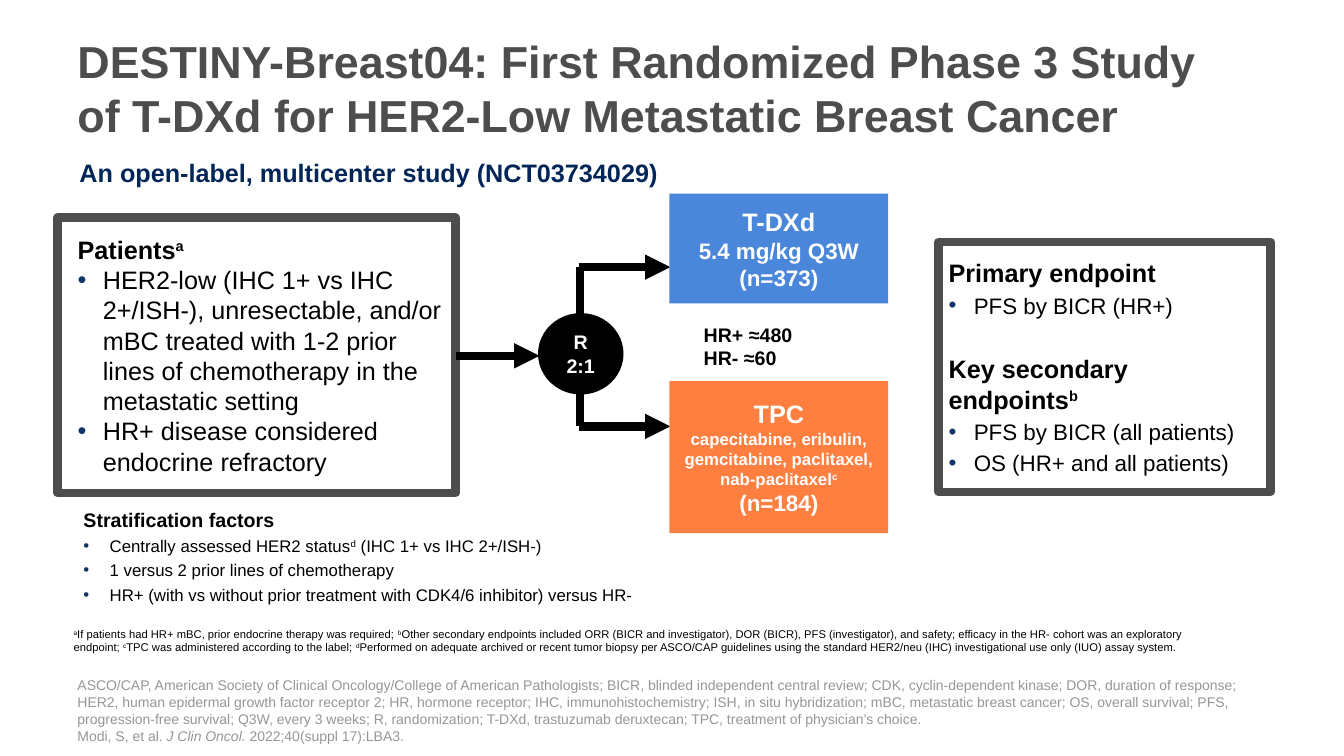
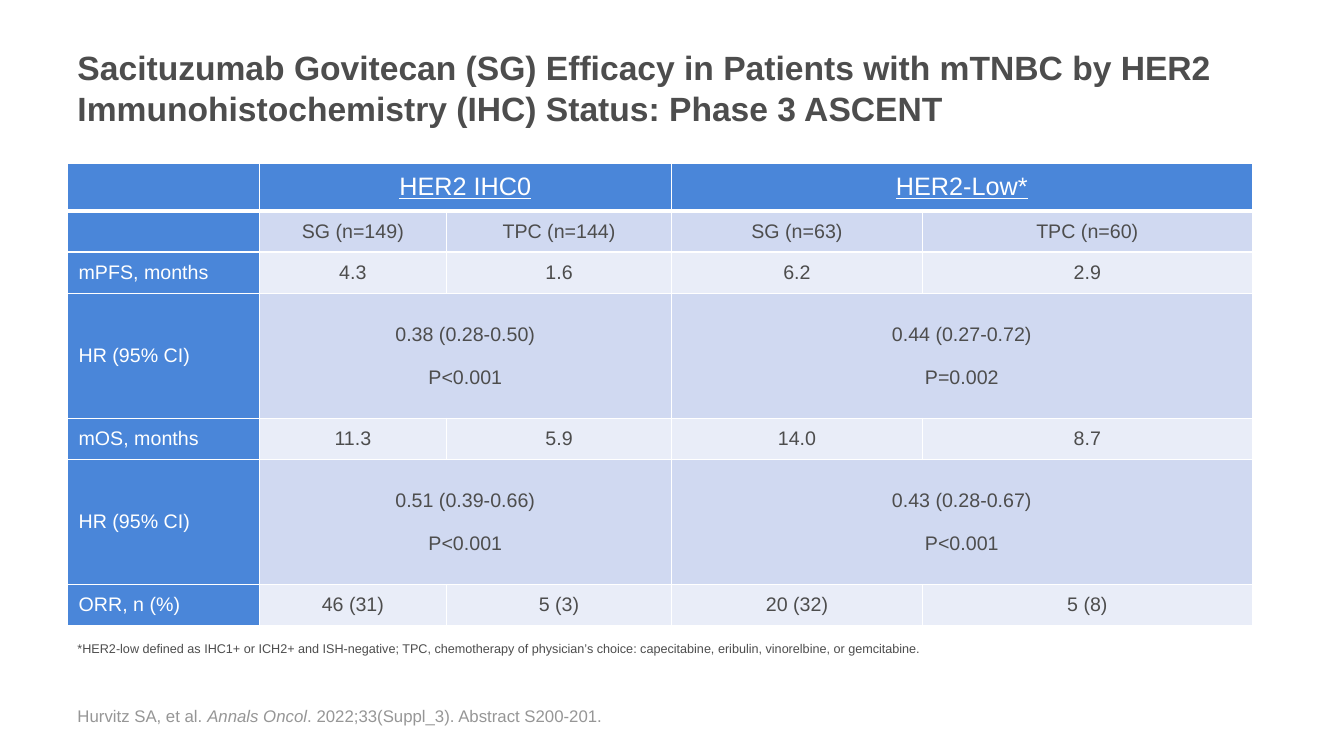
from pptx import Presentation
from pptx import util as u
from pptx.dml.color import RGBColor
from pptx.enum import shapes, text
from pptx.oxml import ns
from lxml import etree

GREY = RGBColor(0x4D, 0x4D, 0x4D)
PALE = RGBColor(0x96, 0x96, 0x96)
NAVY = RGBColor(0x00, 0x25, 0x57)
BLUE = RGBColor(0x4A, 0x86, 0xD9)
ORANGE = RGBColor(0xFF, 0x7F, 0x40)
MID = RGBColor(0xD0, 0xD9, 0xF1)
LIGHT = RGBColor(0xE9, 0xED, 0xF8)
BLACK = RGBColor(0, 0, 0)
WHITE = RGBColor(255, 255, 255)
DOT = "113468"
FONT = "Arial"

LEFT, CENTER = text.PP_ALIGN.LEFT, text.PP_ALIGN.CENTER
TOP, MIDDLE, BOTTOM = (text.MSO_ANCHOR.TOP, text.MSO_ANCHOR.MIDDLE,
                       text.MSO_ANCHOR.BOTTOM)
RECT, OVAL = shapes.MSO_SHAPE.RECTANGLE, shapes.MSO_SHAPE.OVAL
INSET = (0.1, 0.05, 0.1, 0.05)


def node(parent, tag, **attrs):
    return etree.SubElement(parent, ns.qn(tag), **attrs)


def add_dot(para, indent):
    props = para._p.get_or_add_pPr()
    props.set("marL", str(u.Inches(indent)))
    props.set("indent", str(-u.Inches(indent)))
    node(node(props, "a:buClr"), "a:srgbClr", val=DOT)
    node(props, "a:buFont", typeface=FONT)
    node(props, "a:buChar", char="•")


def add_runs(para, line, size, color, bold, under):
    """Write a line in which ^x^ is raised and ~x~ is italic."""
    for i, part in enumerate(line.split("^")):
        for j, piece in enumerate(part.split("~")):
            if not piece:
                continue
            run = para.add_run()
            run.text = piece
            font = run.font
            font.name, font.size = FONT, u.Pt(size)
            font.bold, font.italic, font.underline = bold, j % 2 == 1, under
            font.color.rgb = color
            if i % 2:
                run._r.get_or_add_rPr().set("baseline", "30000")


def add_line(para, line, size=18, color=BLACK, bold=False, under=False,
             align=LEFT, before=0, after=0, dot=0):
    para.alignment = align
    para.space_before, para.space_after = u.Pt(before), u.Pt(after)
    if dot:
        add_dot(para, dot)
    add_runs(para, line, size, color, bold, under)


def write(frame, lines, **form):
    """Fill a frame; a line is text, or text with its own format."""
    for i, line in enumerate(lines):
        words, own = (line, {}) if isinstance(line, str) else line
        para = frame.add_paragraph() if i else frame.paragraphs[0]
        add_line(para, words, **{**form, **own})


def set_frame(frame, anchor, inset):
    frame.word_wrap = True
    frame.vertical_anchor = anchor
    (frame.margin_left, frame.margin_top,
     frame.margin_right, frame.margin_bottom) = map(u.Inches, inset)


def label(slide, box, lines, anchor=TOP, inset=INSET, **form):
    frame = slide.shapes.add_textbox(*map(u.Inches, box)).text_frame
    set_frame(frame, anchor, inset)
    write(frame, lines, **form)


def panel(slide, box, lines, kind=RECT, fill=None, edge=None, inset=INSET,
          **form):
    shape = slide.shapes.add_shape(kind, *map(u.Inches, box))
    shape.shadow.inherit = False
    if fill is None:
        shape.fill.background()
    else:
        shape.fill.solid()
        shape.fill.fore_color.rgb = fill
    if edge is None:
        shape.line.fill.background()
    else:
        shape.line.color.rgb, shape.line.width = edge[0], u.Pt(edge[1])
    set_frame(shape.text_frame, MIDDLE, inset)
    write(shape.text_frame, lines, **form)


def link(slide, x1, y1, x2, y2, arrow=True):
    line = slide.shapes.add_connector(
        shapes.MSO_CONNECTOR.STRAIGHT, *map(u.Inches, (x1, y1, x2, y2)))
    line.line.color.rgb, line.line.width = BLACK, u.Pt(6)
    if arrow:
        node(line.line._get_or_add_ln(), "a:tailEnd", type="triangle")
    node(line._element.spPr, "a:effectLst")


def new_slide(deck, title, size, source, source_size, anchor):
    """Add a blank slide with the shared title and source line."""
    slide = deck.slides.add_slide(deck.slide_layouts[6])
    label(slide, (0.67, 0.22, 11.75, 1.3), [title], MIDDLE,
          size=size, color=GREY, bold=True)
    label(slide, (0.67, 6.95, 11.75, 0.48), source, anchor,
          size=source_size, color=PALE)
    return slide


def patients(slide, box):
    dot = dict(bold=False, dot=0.25, before=0)
    panel(slide, box, [
        "Patients^a^",
        ("HER2-low (IHC 1+ vs IHC 2+/ISH-), unresectable, and/or mBC treated "
         "with 1-2 prior lines of chemotherapy in the metastatic setting",
         dot),
        ("HR+ disease considered endocrine refractory", dot),
    ], edge=(GREY, 6), inset=(0.2, 0.05, 0.1, 0.05), bold=True)


def endpoints(slide, box):
    dot = dict(size=16, bold=False, dot=0.25)
    panel(slide, box, [
        ("Primary endpoint", dict(before=0)),
        ("PFS by BICR (HR+)", dot),
        ("Key secondary endpoints^b^", dict(before=25)),
        ("PFS by BICR (all patients)", dot),
        ("OS (HR+ and all patients)", dot),
    ], edge=(GREY, 6), bold=True, before=3)


def arms(slide, box):
    """Draw the split into two arms, from entry arrow to arm boxes."""
    x, y, w, h = box
    wide, tall, low = 2.17, 1.09, 1.51
    side = x + w - wide
    hub, mid = x + 1.23, y + 1.61
    up, down = y + 0.73, y + 2.31
    link(slide, x, mid, x + 0.83, mid)
    link(slide, hub, up, hub, down, arrow=False)
    for level in (up, down):
        link(slide, hub - 0.01, level, side + 0.01, level)
    form = dict(size=16, color=WHITE, bold=True, align=CENTER)
    panel(slide, (hub - 0.4, mid - 0.41, 0.82, 0.78), ["R", "2:1"], OVAL,
          BLACK, (BLACK, 2), (0.05,) * 4, **{**form, "size": 14})
    panel(slide, (side, y, wide, tall),
          [("T-DXd", dict(size=18)), "5.4 mg/kg Q3W", "(n=373)"],
          fill=BLUE, **form)
    panel(slide, (side, y + h - low, wide, low), [
        ("TPC", dict(size=18)),
        ("capecitabine, eribulin, gemcitabine, paclitaxel, "
         "nab-paclitaxel^c^", dict(size=12)),
        "(n=184)",
    ], fill=ORANGE, **form)
    label(slide, (side + 0.24, y + 1.23, 1.71, 0.57),
          ["HR+ ≈480", "HR- ≈60"], size=14, bold=True)


def factors(slide, box):
    label(slide, box, [
        ("Stratification factors", dict(size=14, bold=True, dot=0)),
        "Centrally assessed HER2 status^d^ (IHC 1+ vs IHC 2+/ISH-)",
        "1 versus 2 prior lines of chemotherapy",
        "HR+ (with vs without prior treatment with CDK4/6 inhibitor) "
        "versus HR-",
    ], size=12, after=3, dot=0.26)


def study(deck):
    slide = new_slide(
        deck, "DESTINY-Breast04: First Randomized Phase 3 Study of T-DXd for "
        "HER2-Low Metastatic Breast Cancer", 32, [
            "ASCO/CAP, American Society of Clinical Oncology/College of "
            "American Pathologists; BICR, blinded independent central review; "
            "CDK, cyclin-dependent kinase; DOR, duration of response; HER2, "
            "human epidermal growth factor receptor 2; HR, hormone receptor; "
            "IHC, immunohistochemistry; ISH, in situ hybridization; mBC, "
            "metastatic breast cancer; OS, overall survival; PFS, "
            "progression-free survival; Q3W, every 3 weeks; R, randomization; "
            "T-DXd, trastuzumab deruxtecan; TPC, treatment of physician’s "
            "choice.",
            "Modi, S, et al. ~J Clin Oncol. ~2022;40(suppl 17):LBA3.",
        ], 10, BOTTOM)
    label(slide, (0.69, 1.51, 7.1, 0.4),
          ["An open-label, multicenter study (NCT03734029)"],
          color=NAVY, bold=True)
    patients(slide, (0.57, 2.16, 3.95, 2.73))
    arms(slide, (4.52, 1.92, 4.29, 3.37))
    endpoints(slide, (9.31, 2.4, 3.29, 2.48))
    factors(slide, (0.73, 4.99, 6.06, 1.35))
    label(slide, (0.73, 6.11, 11.18, 0.4), [
        "^a^If patients had HR+ mBC, prior endocrine therapy was required; "
        "^b^Other secondary endpoints included ORR (BICR and investigator), "
        "DOR (BICR), PFS (investigator), and safety; efficacy in the HR- "
        "cohort was an exploratory endpoint; ^c^TPC was administered "
        "according to the label; ^d^Performed on adequate archived or recent "
        "tumor biopsy per ASCO/CAP guidelines using the standard HER2/neu "
        "(IHC) investigational use only (IUO) assay system.",
    ], BOTTOM, (0, 0.02, 0, 0.02), size=8)


def set_cell(cell, fill, lines, heavy, inset, **form):
    props = cell._tc.get_or_add_tcPr()
    for side in ("a:lnL", "a:lnR", "a:lnT", "a:lnB"):
        width = 3 if heavy and side == "a:lnB" else 1
        edge = node(props, side, w=str(u.Pt(width)))
        node(node(edge, "a:solidFill"), "a:srgbClr", val=str(WHITE))
    cell.fill.solid()
    cell.fill.fore_color.rgb = fill
    cell.vertical_anchor = MIDDLE
    cell.margin_left = u.Inches(inset)
    cell.margin_right = cell.margin_top = cell.margin_bottom = 0
    write(cell.text_frame, lines, **form)


def results(slide, box, rows, cols, heights):
    """Draw the table; a row of three entries spans two columns each."""
    grid = slide.shapes.add_table(len(rows), len(cols),
                                  *map(u.Inches, box)).table
    grid.horz_banding = False
    for col, width in zip(grid.columns, cols):
        col.width = u.Inches(width)
    for r, (row, height) in enumerate(zip(rows, heights)):
        grid.rows[r].height = u.Inches(height)
        if len(row) == 3:
            row = [row[0], row[1], "", row[2], ""]
            for c in (1, 3):
                grid.cell(r, c).merge(grid.cell(r, c + 1))
        for c, entry in enumerate(row):
            head, key = r == 0, c == 0
            first, *rest = entry.split("\n")
            lines = [first] + [(more, dict(before=15)) for more in rest]
            set_cell(grid.cell(r, c),
                     BLUE if head or key else MID if r % 2 else LIGHT,
                     lines, head, 0.11 if key else 0,
                     size=18 if head else 14, under=head,
                     color=WHITE if head or key else GREY,
                     align=LEFT if key else CENTER)


def ascent(deck):
    slide = new_slide(
        deck, "Sacituzumab Govitecan (SG) Efficacy in Patients with mTNBC by "
        "HER2 Immunohistochemistry (IHC) Status: Phase 3 ASCENT", 24,
        ["Hurvitz SA, et al. ~Annals Oncol~. 2022;33(Suppl_3). "
         "Abstract S200-201."], 12, TOP)
    results(slide, (0.67, 1.62, 11.75, 4.59), [
        ["", "HER2 IHC0", "HER2-Low*"],
        ["", "SG (n=149)", "TPC (n=144)", "SG (n=63)", "TPC (n=60)"],
        ["mPFS, months", "4.3", "1.6", "6.2", "2.9"],
        ["HR (95% CI)", "0.38 (0.28-0.50)\nP<0.001",
         "0.44 (0.27-0.72)\nP=0.002"],
        ["mOS, months", "11.3", "5.9", "14.0", "8.7"],
        ["HR (95% CI)", "0.51 (0.39-0.66)\nP<0.001",
         "0.43 (0.28-0.67)\nP<0.001"],
        ["ORR, n (%)", "46 (31)", "5 (3)", "20 (32)", "5 (8)"],
    ], (1.9, 1.86, 2.23, 2.49, 3.27),
        (0.47, 0.41, 0.41, 1.24, 0.41, 1.24, 0.41))
    label(slide, (0.67, 6.31, 9.75, 0.25), [
        "*HER2-low defined as IHC1+ or ICH2+ and ISH-negative; TPC, "
        "chemotherapy of physician’s choice: capecitabine, eribulin, "
        "vinorelbine, or gemcitabine.",
    ], size=9, color=GREY)


def main():
    deck = Presentation()
    deck.slide_width, deck.slide_height = u.Inches(13.33), u.Inches(7.5)
    study(deck)
    ascent(deck)
    deck.save("out.pptx")


if __name__ == "__main__":
    main()
